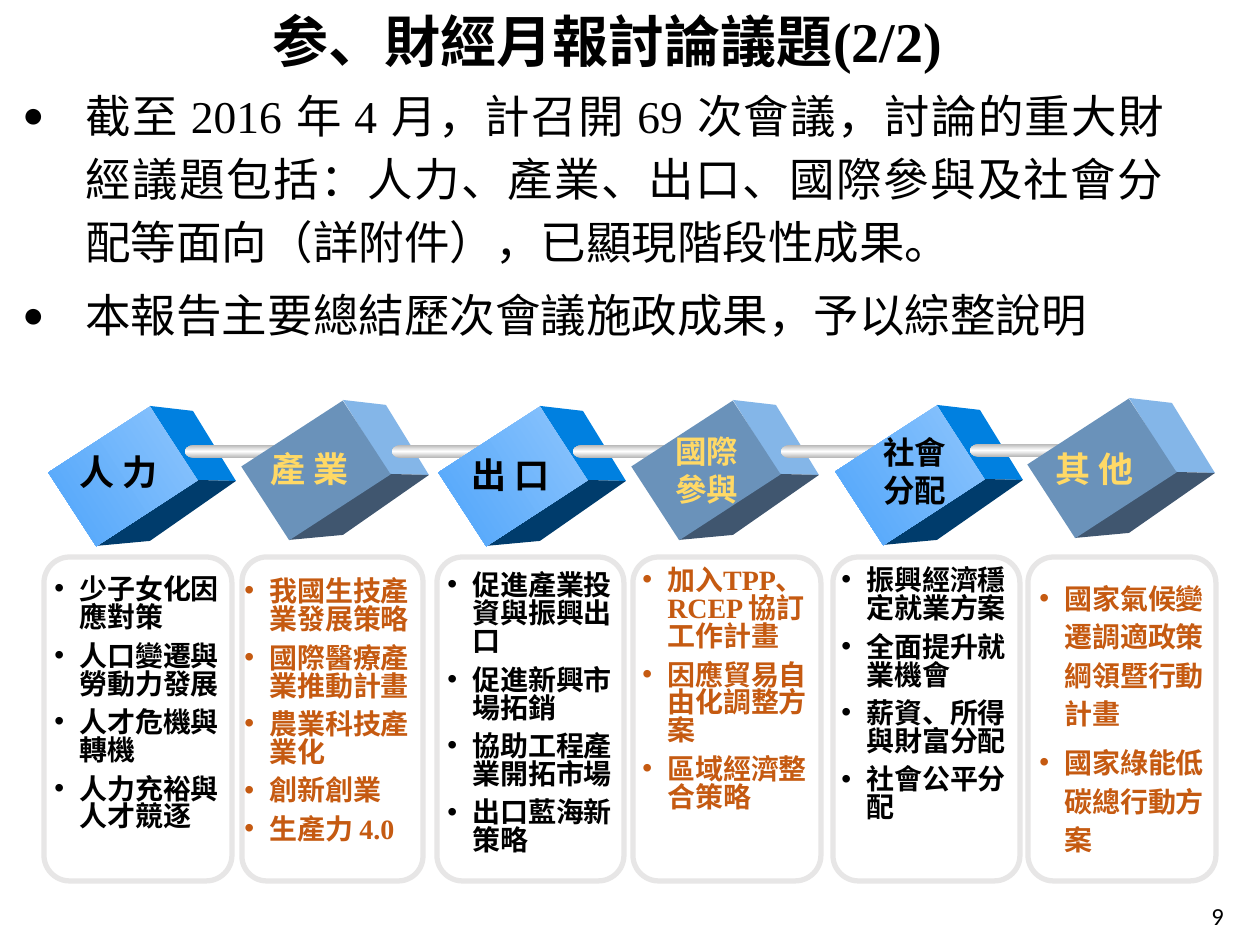
from dataclasses import dataclass

from lxml.etree import SubElement
from pptx import Presentation
from pptx.dml.color import RGBColor
from pptx.enum.shapes import MSO_SHAPE as Shape
from pptx.enum.text import MSO_ANCHOR as Anchor, MSO_AUTO_SIZE as AutoSize, PP_ALIGN as Align
from pptx.oxml.ns import qn
from pptx.util import Pt

PX = 914400 / 126


@dataclass(frozen=True)
class Theme:
    serif: str = "Times New Roman"
    sans: str = "Noto Sans CJK SC"
    number_font: str = "Calibri"
    black: str = "000000"
    yellow: str = "FFD966"
    orange: str = "C55A11"
    border: str = "E7E6E6"
    white: str = "FFFFFF"
    rod: tuple = ("B6B6B6", "FFFFFF", "B6B6B6")
    # Cube faces: front, upper right side, lower side
    bright: tuple = (("8EC5FC", "4FA5FB"), "0080E0", "003C6C")
    muted: tuple = (("6A92BA",), "84B6E8", "40566F")
    title: int = 32
    body: int = 26
    label: int = 20
    long_label: int = 18
    item: int = 16
    number: int = 14


THEME = Theme()
CUBE_WIDTH, CUBE_HEIGHT, CUBE_TURN = 88, 121, 57
CARD_TOP, CARD_HEIGHT = 557, 324
LABEL_WIDTH, LIST_WIDTH = 118, 191

BODY = [
    "截至 2016 年 4 月，計召開 69 次會議，討論的重大財經議題包括：人力、產業、出口、國際參與及社會分配等面向（詳附件），已顯現階段性成果。",
    "本報告主要總結歷次會議施政成果，予以綜整說明",
]

# Label, label place, cube place, card left and width, list place and height, items
TOPICS = [
    ("人 力", (67, 444), (79, 416), (44, 188), (42, 571, 331),
     ["少子女化因應對策", "人口變遷與勞動力發展", "人才危機與轉機", "人力充裕與人才競逐"]),
    ("產 業", (258, 441), (272, 410), (242, 181), (232, 573, 281),
     ["我國生技產業發展策略", "國際醫療產業推動計畫", "農業科技產業化", "創新創業", "生產力 4.0"]),
    ("出 口", (459, 447), (469, 416), (437, 187), (435, 567, 299),
     ["促進產業投資與振興出口", "促進新興市場拓銷", "協助工程產業開拓市場", "出口藍海新策略"]),
    ("國際參與", (663, 426), (662, 410), (633, 188), (630, 562, 260),
     ["加入TPP、RCEP 協訂工作計畫", "因應貿易自由化調整方案", "區域經濟整合策略"]),
    ("社會分配", (871, 427), (866, 415), (833, 187), (829, 562, 271),
     ["振興經濟穩定就業方案", "全面提升就業機會", "薪資、所得與財富分配", "社會公平分配"]),
    ("其 他", (1043, 441), (1058, 408), (1028, 188), (1027, 570, 295),
     ["國家氣候變遷調適政策綱領暨行動計畫", "國家綠能低碳總行動方案"]),
]
RODS = [(185, 445), (392, 445), (573, 445), (781, 445), (970, 444)]


def px(value):
    return round(value * PX)


def box(*lengths):
    return [px(length) for length in lengths]


def color(code):
    return RGBColor.from_string(code)


def paint(shape, colors, line=None, width=1):
    """Fill with nothing, one colour or a downward gradient; set the outline."""
    shape.shadow.inherit = False
    if not colors:
        shape.fill.background()
    elif len(colors) == 1:
        shape.fill.solid()
        shape.fill.fore_color.rgb = color(colors[0])
    else:
        shape.fill.gradient()
        shape.fill.gradient_angle = 270
        stops = shape._element.spPr.find(".//" + qn("a:gsLst"))
        for stop in list(stops):
            stops.remove(stop)
        for index, code in enumerate(colors):
            position = 100000 * index // (len(colors) - 1)
            stop = SubElement(stops, qn("a:gs"), pos=str(position))
            SubElement(stop, qn("a:srgbClr"), val=code)
    if line:
        shape.line.color.rgb = color(line)
        shape.line.width = Pt(width)
    else:
        shape.line.fill.background()


def add_run(paragraph, text, font, size, code, bold=False):
    run = paragraph.add_run()
    run.text = text
    run.font.name = font
    run.font.size = Pt(size)
    run.font.bold = bold
    run.font.color.rgb = color(code)
    east_asian = SubElement(run._r.get_or_add_rPr(), qn("a:ea"))
    east_asian.set("typeface", THEME.sans)


def add_text_box(slide, place):
    frame = slide.shapes.add_textbox(*box(*place)).text_frame
    frame.word_wrap = True
    return frame


def add_bullet(paragraph, indent, character, percent=100):
    properties = paragraph._p.get_or_add_pPr()
    properties.set("marL", str(px(indent)))
    properties.set("indent", str(-px(indent)))
    SubElement(properties, qn("a:buSzPct"), val=str(percent * 1000))
    SubElement(properties, qn("a:buFont"), typeface="Arial")
    SubElement(properties, qn("a:buChar"), char=character)


def add_bullets(slide, place, items, style, indent, spacing, character="•", percent=100, align=None):
    frame = add_text_box(slide, place)
    for index, item in enumerate(items):
        paragraph = frame.add_paragraph() if index else frame.paragraphs[0]
        add_bullet(paragraph, indent, character, percent)
        paragraph.alignment = align
        paragraph.line_spacing = Pt(spacing)
        paragraph.space_before = Pt(6 if index else 0)
        add_run(paragraph, item, *style)


def add_title(slide, text):
    title = slide.shapes.title
    title.left, title.top, title.width, title.height = box(3, 0, 1160, 88)
    frame = title.text_frame
    frame.auto_size = AutoSize.NONE
    frame.vertical_anchor = Anchor.MIDDLE
    paragraph = frame.paragraphs[0]
    paragraph._p.get_or_add_pPr().set("marL", str(px(49)))
    paragraph.alignment = Align.CENTER
    paragraph.line_spacing = 0.9
    add_run(paragraph, text, THEME.serif, THEME.title, THEME.black, True)


def add_card(slide, left, width):
    card = slide.shapes.add_shape(Shape.ROUNDED_RECTANGLE, *box(left, CARD_TOP, width, CARD_HEIGHT))
    card.adjustments[0] = 0.137
    paint(card, (), THEME.border, 3)


def add_cube(slide, left, top, faces):
    front, upper, lower = faces
    center_x, center_y = left + CUBE_WIDTH // 2, top + CUBE_HEIGHT // 2
    # Sides, as corner offsets from the centre of the front
    sides = [
        (upper, [(27, -70), (70, -65), (113, 5), (73, 4)]),
        (lower, [(73, 4), (113, 5), (27, 65), (-27, 70)]),
    ]
    for code, offsets in sides:
        corners = [(center_x + x, center_y + y) for x, y in offsets]
        builder = slide.shapes.build_freeform(*corners[0], scale=PX)
        builder.add_line_segments(corners[1:], close=True)
        paint(builder.convert_to_shape(), (code,))
    face = slide.shapes.add_shape(Shape.RECTANGLE, *box(left, top, CUBE_WIDTH, CUBE_HEIGHT))
    face.rotation = CUBE_TURN
    paint(face, front)


def add_rod(slide, left, top):
    parts = [
        (Shape.OVAL, 0, 0, 19, 13, None),
        (Shape.RECTANGLE, 10, 0, 93, 13, None),
        (Shape.OVAL, 94, 0, 18, 13, THEME.white),
        (Shape.OVAL, 105, 4, 5, 4, None),
    ]
    for kind, x, y, width, height, line in parts:
        part = slide.shapes.add_shape(kind, *box(left + x, top + y, width, height))
        paint(part, THEME.rod, line)


def add_label(slide, text, place, code):
    size = THEME.label if " " in text else THEME.long_label
    height = 55 if " " in text else 89
    frame = add_text_box(slide, (*place, LABEL_WIDTH, height))
    add_run(frame.paragraphs[0], text, THEME.sans, size, code, True)


def main():
    presentation = Presentation()
    presentation.slide_width, presentation.slide_height = box(1260, 945)
    slide = presentation.slides.add_slide(presentation.slide_layouts[5])

    # Title and introduction
    add_title(slide, "参、財經月報討論議題(2/2)")
    add_bullets(slide, (10, 73, 1167, 277), BODY, (THEME.serif, THEME.body, THEME.black),
                63, 36, "●", 80, Align.JUSTIFY)

    # Cards, then the chain of cubes and rods
    for topic in TOPICS:
        add_card(slide, *topic[3])
    for index, topic in enumerate(TOPICS):
        add_cube(slide, *topic[2], THEME.muted if index % 2 else THEME.bright)
        if index < len(RODS):
            add_rod(slide, *RODS[index])

    # Labels and lists, in alternating colours
    for index, (label, label_place, _, _, (left, top, height), items) in enumerate(TOPICS):
        odd = index % 2
        add_label(slide, label, label_place, THEME.yellow if odd else THEME.black)
        font, code = (THEME.serif, THEME.orange) if odd else (THEME.sans, THEME.black)
        spacing = 22 if index == len(TOPICS) - 1 else 16
        add_bullets(slide, (left, top, LIST_WIDTH, height), items,
                    (font, THEME.item, code, True), 25, spacing)

    # Page number
    number = add_text_box(slide, (1199, 895, 72, 50))
    add_run(number.paragraphs[0], "9", THEME.number_font, THEME.number, THEME.black)

    presentation.save("out.pptx")


if __name__ == "__main__":
    main()
